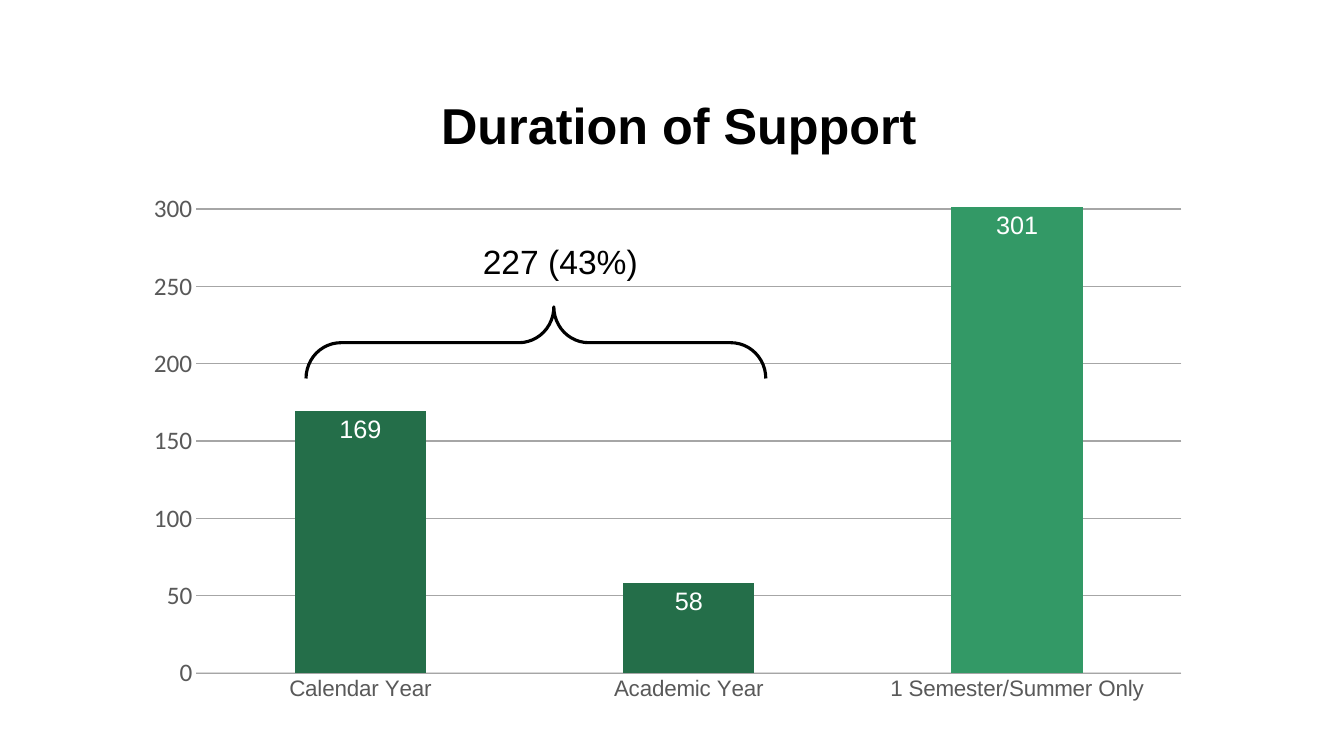
from pptx import Presentation
from pptx.chart.data import CategoryChartData
from pptx.dml.color import RGBColor
from pptx.enum import chart as ch, shapes, text
from pptx.oxml import parse_xml
from pptx.oxml.ns import nsdecls
from pptx.util import Inches, Pt

BLACK = RGBColor(0, 0, 0)
WHITE = RGBColor(0xFF, 0xFF, 0xFF)
LABEL_GREY = RGBColor(0x59, 0x59, 0x59)
GRID_GREY = RGBColor(0xA6, 0xA6, 0xA6)
AXIS_GREY = RGBColor(0xD9, 0xD9, 0xD9)
GREEN = RGBColor(0x33, 0x99, 0x66)
DARK_GREEN = RGBColor(0x24, 0x6E, 0x49)


def style(font, size, color, name="Arial", bold=False):
    font.size = Pt(size)
    font.color.rgb = color
    font.name = name
    font.bold = bold


def manual_layout(target="", **fractions):
    """Layout element that places a chart part by fractions of the chart."""
    inner = f'<c:layoutTarget val="{target}"/>' if target else ""
    inner += "".join(f'<c:{side}Mode val="edge"/>' for side in "xy")
    inner += "".join(f'<c:{key} val="{value}"/>' for key, value in fractions.items())
    return parse_xml(f'<c:layout {nsdecls("c")}><c:manualLayout>{inner}'
                     '</c:manualLayout></c:layout>')


prs = Presentation()
prs.slide_width, prs.slide_height = Inches(13.33), Inches(7.5)
slide = prs.slides.add_slide(prs.slide_layouts[6])

# Support duration chart
durations = CategoryChartData()
durations.categories = ["Calendar Year", "Academic Year", "1 Semester/Summer Only"]
durations.add_series("Series 1", (169, 58, 301))
support = slide.shapes.add_chart(
    ch.XL_CHART_TYPE.COLUMN_STACKED, Inches(1.31), Inches(0.51),
    Inches(10.62), Inches(6.56), durations).chart
style(support.font, 10, BLACK, "Calibri")
support.has_legend = False

# Chart title
support.has_title = True
heading = support.chart_title.text_frame
heading.text = "Duration of Support"
style(heading.paragraphs[0].font, 36, BLACK, bold=True)
support.chart_title.include_in_layout = False
title_xml = support.chart_title._element
for old_layout in title_xml.findall("{*}layout"):
    title_xml.remove(old_layout)
title_xml.find("{*}tx").addnext(manual_layout(x=0.28, y=0.05))

# Plot area
plot_xml = support._chartSpace.chart.plotArea
for old_layout in plot_xml.findall("{*}layout"):
    plot_xml.remove(old_layout)
plot_xml.insert(0, manual_layout("inner", x=0.06, y=0.18, w=0.92, h=0.76))

# Axes
periods, counts = support.category_axis, support.value_axis
for axis in (periods, counts):
    axis.major_tick_mark = axis.minor_tick_mark = ch.XL_TICK_MARK.NONE
style(periods.tick_labels.font, 16, LABEL_GREY)
periods.format.line.color.rgb = AXIS_GREY
periods.format.line.width = Pt(0.75)
style(counts.tick_labels.font, 18, LABEL_GREY, "Calibri")
counts.format.line.fill.background()
counts.minimum_scale, counts.maximum_scale, counts.major_unit = 0, 325, 50
counts.major_gridlines.format.line.color.rgb = GRID_GREY
counts.major_gridlines.format.line.width = Pt(1)

# Columns and their labels
columns = support.plots[0]
columns.gap_width, columns.overlap = 150, 100
columns.vary_by_categories = False
recipients = columns.series[0]
recipients.format.fill.solid()
recipients.format.fill.fore_color.rgb = GREEN
for year_column in (0, 1):
    fill = recipients.points[year_column].format.fill
    fill.solid()
    fill.fore_color.rgb = DARK_GREEN
values = recipients.data_labels
values.show_value = True
values.position = ch.XL_LABEL_POSITION.INSIDE_END
style(values.font, 18, WHITE)

# Brace over the two year-long columns
brace = slide.shapes.add_shape(shapes.MSO_SHAPE.LEFT_BRACE, Inches(4.96), Inches(1.12),
                               Inches(0.71), Inches(4.56))
brace.rotation = 90
brace.adjustments[0], brace.adjustments[1] = 0.488, 0.461
brace.shadow.inherit = False
brace.fill.background()
brace.line.color.rgb = BLACK
brace.line.width = Pt(2.25)

# Combined total above the brace
total = slide.shapes.add_textbox(Inches(4.69), Inches(2.34), Inches(1.76), Inches(0.5)).text_frame
total.word_wrap = False
total.auto_size = text.MSO_AUTO_SIZE.SHAPE_TO_FIT_TEXT
total.text = "227 (43%)"
style(total.paragraphs[0].font, 24, BLACK)

prs.save("out.pptx")
